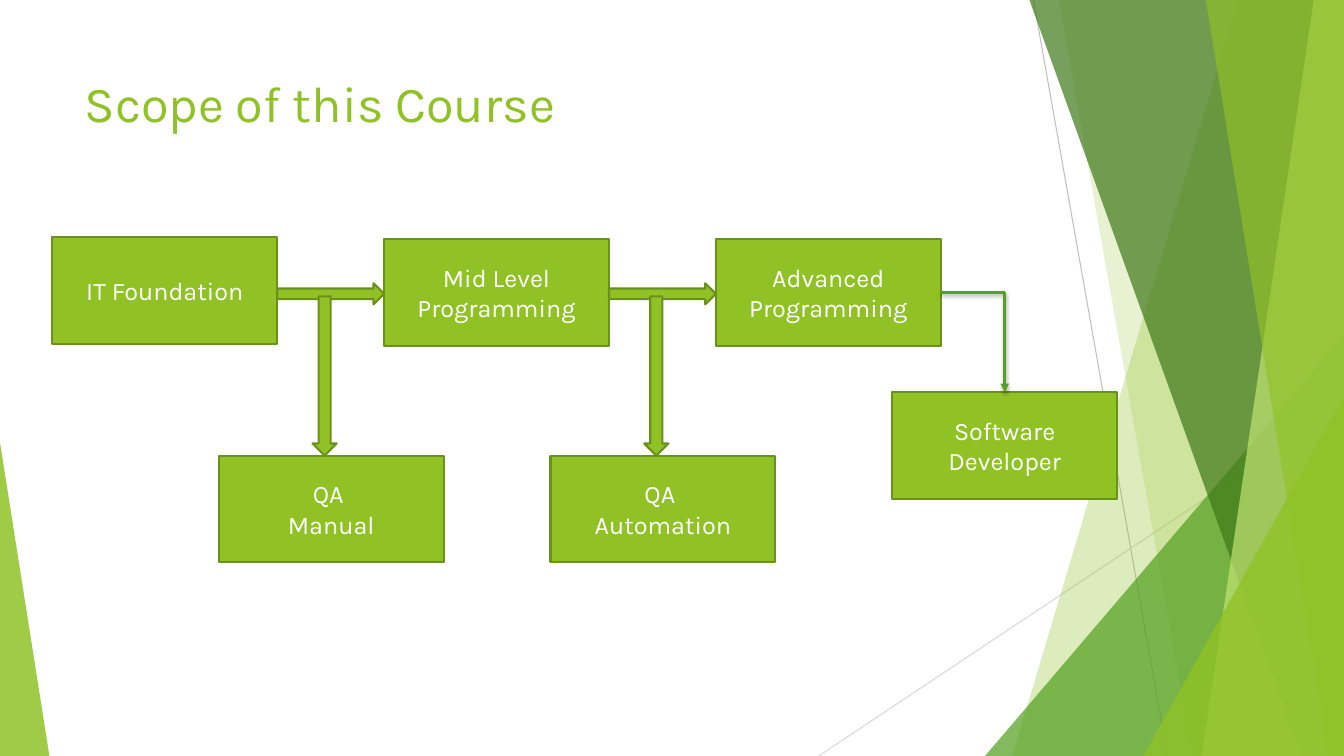
"""Build the course scope slide: a flow of course levels over faceted green panels."""
from dataclasses import dataclass

from lxml.etree import SubElement
from pptx import Presentation
from pptx.dml.color import RGBColor
from pptx.enum.shapes import MSO_CONNECTOR, MSO_SHAPE
from pptx.enum.text import MSO_ANCHOR, PP_ALIGN
from pptx.oxml.ns import qn
from pptx.util import Inches, Pt

FONT = "Karla"
GREEN = RGBColor(0x90, 0xC2, 0x26)
EDGE = RGBColor(0x6B, 0x90, 0x1C)
LEAF = RGBColor(0x54, 0xA0, 0x21)
FOREST = RGBColor(0x3F, 0x78, 0x19)
LIME = RGBColor(0xC0, 0xE4, 0x74)
GREY = RGBColor(0xBF, 0xBF, 0xBF)
PALE_GREY = RGBColor(0xD9, 0xD9, 0xD9)
WHITE = RGBColor(0xFF, 0xFF, 0xFF)

WIDTH, HEIGHT = 13.33, 7.5
BOX_W, BOX_H = 2.23, 1.06
FIRST_X, STEP = 0.52, 3.29
GAP = STEP - BOX_W
QA_SHIFT, QA_Y = 1.65, 4.52


@dataclass(frozen=True)
class Panel:
    """A slanted panel reaching the right edge of the slide."""
    top_x: float
    bottom_x: float
    color: RGBColor
    opacity: int


@dataclass(frozen=True)
class Corner:
    """A right triangle standing on the bottom edge of the slide."""
    x: float
    y: float
    w: float
    apex: float
    color: RGBColor
    opacity: int


@dataclass(frozen=True)
class Box:
    """A labelled step of the course."""
    text: str
    x: float
    y: float


FACETS = [
    Panel(12.28, 10.04, GREEN, 30),
    Panel(10.5, 11.83, GREEN, 20),
    Corner(9.77, 3.33, 3.56, 1, LEAF, 72),
    Panel(10.21, 12.91, FOREST, 70),
    Panel(13.03, 11.92, LIME, 70),
    Panel(11.96, 13.18, GREEN, 65),
    Corner(11.34, 3.93, 1.99, 1, GREEN, 80),
    Corner(0, 4.39, 0.49, 0, GREEN, 85),
]
LEVELS = [
    Box("IT Foundation", FIRST_X, 2.35),
    Box("Mid Level Programming", FIRST_X + STEP, 2.37),
    Box("Advanced\nProgramming", FIRST_X + 2 * STEP, 2.37),
]
QA_TRACKS = ["QA \nManual", "QA \nAutomation"]
DEVELOPER = Box("Software\nDeveloper", 8.85, 3.89)


def write(tf, text: str, *, size: float, color: RGBColor,
          align: PP_ALIGN, anchor: MSO_ANCHOR) -> None:
    """Fill a text frame with formatted paragraphs."""
    tf.text = text
    tf.word_wrap = True
    tf.vertical_anchor = anchor
    for p in tf.paragraphs:
        p.alignment = align
        for r in p.runs:
            r.font.name = FONT
            r.font.size = Pt(size)
            r.font.color.rgb = color


def add_facet(s, facet: Panel | Corner) -> None:
    """Draw one translucent background facet."""
    if isinstance(facet, Panel):
        points = [(WIDTH, 0), (WIDTH, HEIGHT), (facet.bottom_x, HEIGHT)]
        builder = s.shapes.build_freeform(Inches(facet.top_x), 0)
        builder.add_line_segments([(Inches(x), Inches(y)) for x, y in points])
        sp = builder.convert_to_shape()
    else:
        sp = s.shapes.add_shape(
            MSO_SHAPE.ISOSCELES_TRIANGLE, Inches(facet.x), Inches(facet.y),
            Inches(facet.w), Inches(HEIGHT - facet.y))
        sp.adjustments[0] = facet.apex
    sp.shadow.inherit = False
    sp.line.fill.background()
    sp.fill.solid()
    sp.fill.fore_color.rgb = facet.color
    srgb = sp.fill._xPr.find(".//" + qn("a:srgbClr"))
    SubElement(srgb, qn("a:alpha"), val=str(facet.opacity * 1000))


def add_line(s, kind: MSO_CONNECTOR, x1: float, y1: float, x2: float, y2: float,
             color: RGBColor, width: float):
    """Draw a connector without a shadow."""
    line = s.shapes.add_connector(kind, Inches(x1), Inches(y1), Inches(x2), Inches(y2))
    line.line.color.rgb = color
    line.line.width = Pt(width)
    SubElement(line._element.spPr, qn("a:effectLst"))
    return line


def add_solid(s, kind: MSO_SHAPE, x: float, y: float, w: float, h: float):
    """Draw a green outlined shape."""
    sp = s.shapes.add_shape(kind, Inches(x), Inches(y), Inches(w), Inches(h))
    sp.shadow.inherit = False
    sp.fill.solid()
    sp.fill.fore_color.rgb = GREEN
    sp.line.color.rgb = EDGE
    sp.line.width = Pt(1.5)
    return sp


def add_box(s, box: Box):
    """Draw a labelled step."""
    sp = add_solid(s, MSO_SHAPE.RECTANGLE, box.x, box.y, BOX_W, BOX_H)
    write(sp.text_frame, box.text, size=18, color=WHITE,
          align=PP_ALIGN.CENTER, anchor=MSO_ANCHOR.MIDDLE)
    return sp


def add_elbow(s, start, end) -> None:
    """Join the right side of one box to the top of another with an arrow."""
    line = add_line(s, MSO_CONNECTOR.ELBOW, 9.33, 2.89, 9.96, 3.89, LEAF, 2)
    line.begin_connect(start, 3)
    line.end_connect(end, 0)
    spPr = line._element.spPr
    spPr.find(qn("a:prstGeom")).set("prst", "bentConnector2")
    SubElement(spPr.find(qn("a:ln")), qn("a:tailEnd"), type="triangle")
    shadow = SubElement(spPr.find(qn("a:effectLst")), qn("a:outerShdw"),
                        blurRad=str(Pt(3)), dist=str(Pt(2)), dir="5400000", rotWithShape="0")
    srgb = SubElement(shadow, qn("a:srgbClr"), val="000000")
    SubElement(srgb, qn("a:alpha"), val="35000")


def main() -> None:
    """Assemble and save the slide."""
    prs = Presentation()
    prs.slide_width, prs.slide_height = Inches(WIDTH), Inches(HEIGHT)
    s = prs.slides.add_slide(prs.slide_layouts[5])

    add_line(s, MSO_CONNECTOR.STRAIGHT, 10.25, 0, 11.58, HEIGHT, GREY, 0.75)
    add_line(s, MSO_CONNECTOR.STRAIGHT, WIDTH, 4.03, 8.12, HEIGHT, PALE_GREY, 0.75)
    for facet in FACETS:
        add_facet(s, facet)

    title = s.shapes.title
    title.left, title.top = Inches(0.74), Inches(0.67)
    title.width, title.height = Inches(9.4), Inches(1.44)
    write(title.text_frame, "Scope of this Course", size=36, color=GREEN,
          align=PP_ALIGN.LEFT, anchor=MSO_ANCHOR.TOP)

    levels = [add_box(s, level) for level in LEVELS]
    for i, track in enumerate(QA_TRACKS):
        x = FIRST_X + i * STEP
        add_solid(s, MSO_SHAPE.RIGHT_ARROW, x + BOX_W, 2.81, GAP, 0.21)
        add_box(s, Box(track, x + QA_SHIFT, QA_Y))
        add_solid(s, MSO_SHAPE.DOWN_ARROW, x + 2.58, 2.94, 0.24, QA_Y - 2.94)
    add_elbow(s, levels[-1], add_box(s, DEVELOPER))

    prs.save("out.pptx")


if __name__ == "__main__":
    main()
